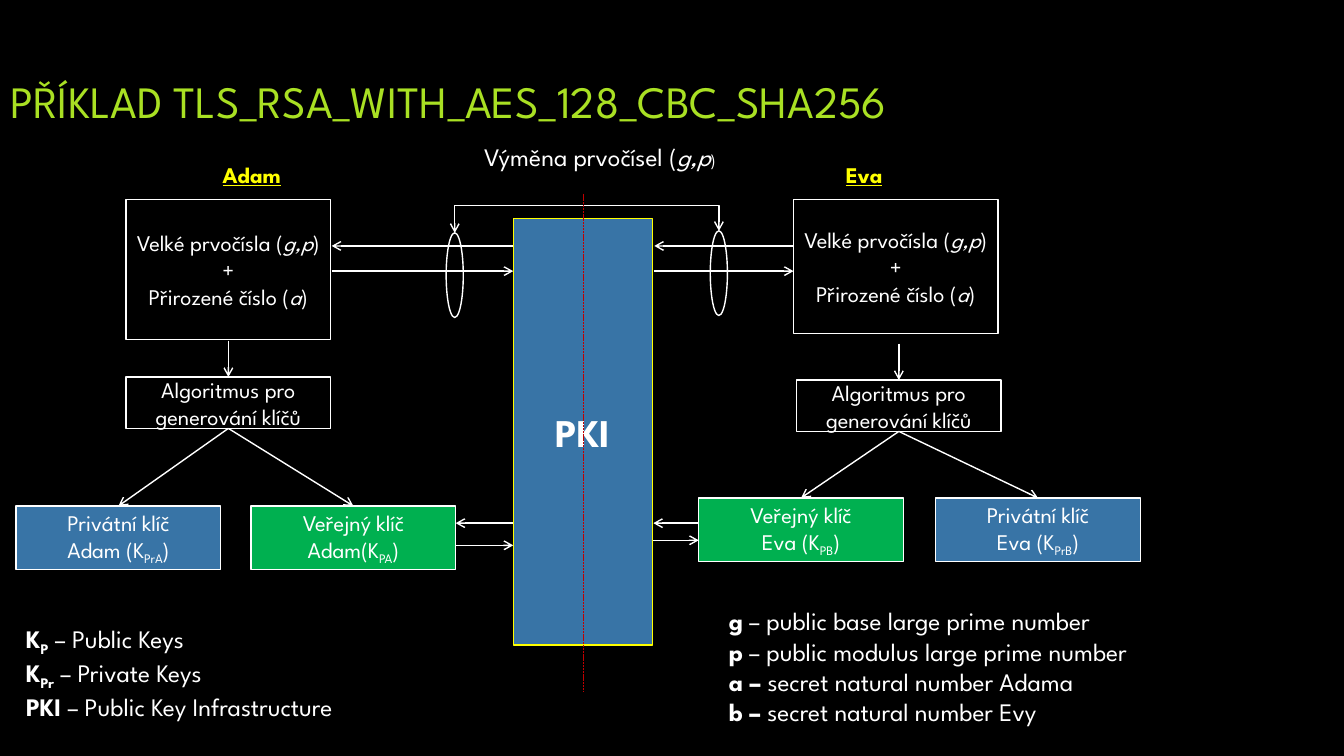
from lxml.etree import SubElement
from pptx import Presentation
from pptx.dml.color import RGBColor
from pptx.enum.dml import MSO_LINE as Dash
from pptx.enum.shapes import MSO_CONNECTOR as Conn, MSO_SHAPE as Kind
from pptx.enum.text import MSO_ANCHOR as Anchor, PP_ALIGN as Align
from pptx.oxml.ns import qn
from pptx.util import Inches, Pt

FONT = "League Spartan"
WHITE, YELLOW, LIME = "FFFFFF", "FFFF00", "A9E023"
BLUE, GREEN, RED, BLACK = "3874A6", "00B050", "C00000", "000000"
WIDE = 2.03  # width of every box in a person's column
KEY_H, ALGO_H = 0.63, 0.51


def grid(*cells):
    """Turn cells of a one-inch grid into lengths."""
    return [Inches(c) for c in cells]


def paint(target, color):
    """Give a fill, line fill or font a solid colour."""
    if hasattr(target, "solid"):
        target.solid()
        target = target.fore_color
    else:
        target = target.color
    target.rgb = RGBColor.from_string(color)


def write(frame, paras, size, color=WHITE, align=Align.LEFT):
    """Style letters: b bold, i italic, u underlined, s subscript, t small."""
    frame.word_wrap = True
    for n, runs in enumerate(paras):
        para = frame.add_paragraph() if n else frame.paragraphs[0]
        para.alignment = align
        for text, style in runs:
            if text == "\n":
                para.add_line_break()
                continue
            run = para.add_run()
            run.text = text
            font = run.font
            font.name = FONT
            font.size = Pt(12 if "t" in style else size)
            font.bold = "b" in style
            font.italic = "i" in style
            font.underline = "u" in style
            if "s" in style:
                run._r.get_or_add_rPr().set("baseline", "-25000")
            paint(font, color)


def label(slide, box, paras, size, color=WHITE, align=Align.LEFT):
    text = slide.shapes.add_textbox(*grid(*box))
    write(text.text_frame, paras, size, color, align)
    return text


def block(slide, box, paras=(), fill=None, edge=WHITE, size=16, kind=Kind.RECTANGLE):
    shape = slide.shapes.add_shape(kind, *grid(*box))
    shape.shadow.inherit = False
    if fill:
        paint(shape.fill, fill)
    else:
        shape.fill.background()
    paint(shape.line.fill, edge)
    shape.line.width = Pt(1)
    shape.text_frame.vertical_anchor = Anchor.MIDDLE
    write(shape.text_frame, paras, size, align=Align.CENTER)


def link(slide, start, end, tips=("tailEnd",), color=WHITE, width=1, kind=Conn.STRAIGHT):
    line = slide.shapes.add_connector(kind, *grid(*start, *end))
    paint(line.line.fill, color)
    line.line.width = Pt(width)
    for tip in tips:
        SubElement(line.line._get_or_add_ln(), qn("a:" + tip), type="arrow")
    SubElement(line._element.spPr, qn("a:effectLst"))
    return line


def person(slide, x, y, name, shift, tall, algo, keys):
    """Column of one person; algo and keys are offset from its corner."""
    label(slide, (x + shift, y - 0.43, 0.92, 0.37), [[(name, "bu")]], 16, YELLOW)
    block(slide, (x, y, WIDE, tall), [
        [("Velké prvočísla (", ""), ("g,p", "i"), (")", "")],
        [("+", "")],
        [("Přirozené číslo (", ""), ("a", "i"), (")", "")]])
    left, top = x + algo[0], y + algo[1]
    mid = left + WIDE / 2
    block(slide, (left, top, WIDE, ALGO_H), [[("Algoritmus pro generování klíčů", "")]])
    link(slide, (mid, top - 0.36), (mid, top))
    for dx, dy, fill, first, owner, sub in keys:
        block(slide, (x + dx, y + dy, WIDE, KEY_H),
              [[(first, ""), ("\n", ""), (owner, ""), (sub, "s"), (")", "")]], fill)
        link(slide, (mid, top + ALGO_H), (x + dx + WIDE / 2, y + dy))


def exchange(slide, x, y, wide, high):
    """PKI pillar with the arrows to both columns."""
    right = x + wide
    block(slide, (x, y, wide, high), [[("PKI", "b")]], BLUE, YELLOW, 28)
    pairs = [(3.29, x, 0.27, 0.52), (right + 0.02, 7.87, 0.27, 0.52),
             (4.52, x, 3.02, 3.24), (right + 0.01, 6.93, 3.02, 3.19)]
    for a, b, back, forth in pairs:
        link(slide, (a, y + back), (b, y + back), ("headEnd",))
        link(slide, (a, y + forth), (b, y + forth))


def primes(slide, left, right, top):
    """Ovals around the upper arrows, joined by a bracket with a caption."""
    drop, rise = 0.02, 0.27
    for mid, head in ((left, top + drop), (right, top)):
        block(slide, (mid - 0.085, head, 0.17, 0.84), kind=Kind.OVAL)
    cx, cy, half = (left + right) / 2, top + drop / 2, (right - left) / 2
    elbow = link(slide, (cx + drop / 2, cy + half), (cx - drop / 2, cy - half),
                 ("headEnd", "tailEnd"), kind=Conn.ELBOW)
    props = elbow._element.spPr
    props.find(qn("a:xfrm")).set("rot", "5400000")
    bend = props.find(qn("a:prstGeom")).find(qn("a:avLst"))
    SubElement(bend, qn("a:gd"), name="adj1", fmla=f"val {round(rise / drop * 100000)}")
    text = label(slide, (4.22, top - 0.98, 3.46, 0.48),
                 [[("Výměna prvočísel (", ""), ("g,p", "i"), (")", "t")]],
                 18, align=Align.CENTER)
    text.text_frame.vertical_anchor = Anchor.MIDDLE


def legends(slide):
    label(slide, (0.16, 6.13, 4.48, 1.01), [
        [("K", "b"), ("P", "bs"), (" – Public Keys", "")],
        [("K", "b"), ("Pr", "bs"), (" – Private Keys", "")],
        [("PKI", "b"), (" – Public Key Infrastructure", "")]], 18)
    label(slide, (7.13, 5.96, 5.94, 1.31), [
        [("g", "b"), (" – public base large prime number", "")],
        [("p", "b"), (" – public modulus large prime number", "")],
        [("a – ", "b"), ("secret natural number Adama", "")],
        [("b – ", "b"), ("secret natural number Evy", "")]], 18)


def heading(slide):
    title = slide.shapes.title
    title.left, title.top, title.width, title.height = grid(0, 0.67, 13.33, 0.65)
    title.text_frame.vertical_anchor = Anchor.MIDDLE
    write(title.text_frame, [[("PŘÍKLAD TLS_RSA_WITH_AES_128_CBC_SHA256", "")]], 32, LIME)


def main():
    deck = Presentation()
    deck.slide_width, deck.slide_height = grid(13.33, 7.5)
    slide = deck.slides.add_slide(deck.slide_layouts[5])
    paint(slide.background.fill, BLACK)
    heading(slide)
    person(slide, 1.25, 1.98, "Adam", 0.86, 1.39, (0, 1.76), [
        (-1.09, 3.04, BLUE, "Privátní klíč", "Adam (K", "PrA"),
        (1.24, 3.04, GREEN, "Veřejný klíč", "Adam(K", "PA")])
    person(slide, 7.87, 1.98, "Eva", 0.42, 1.33, (0.03, 1.79), [
        (1.41, 2.96, BLUE, "Privátní klíč", "Eva (K", "PrB"),
        (-0.94, 2.96, GREEN, "Veřejný klíč", "Eva (K", "PB")])
    exchange(slide, 5.09, 2.17, 1.38, 4.23)
    primes(slide, 4.51, 7.13, 2.29)
    legends(slide)
    axis = link(slide, (5.79, 1.92), (5.79, 6.87), (), RED, 0.5)
    axis.line.dash_style = Dash.SQUARE_DOT
    deck.save("out.pptx")


if __name__ == "__main__":
    main()
